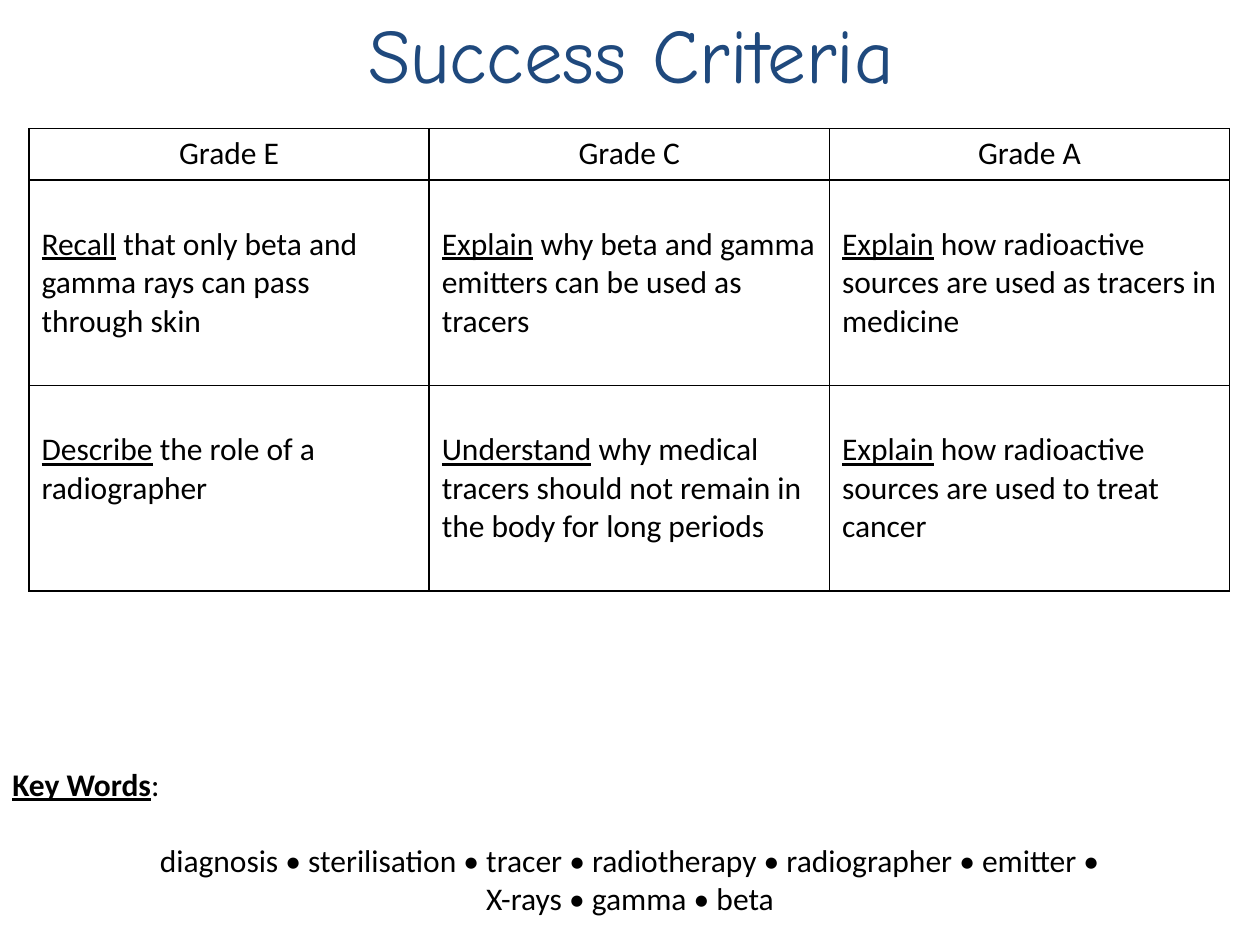
from lxml import etree
from pptx import Presentation
from pptx.dml.color import RGBColor
from pptx.enum.text import MSO_ANCHOR, PP_ALIGN
from pptx.oxml.ns import qn
from pptx.util import Inches, Pt

CENTER = PP_ALIGN.CENTER
LEFT = PP_ALIGN.LEFT
TOP = MSO_ANCHOR.TOP
BODY_FONT = "Calibri"
TITLE_FONT = "Comic Neue"
BLACK = "000000"
NAVY = "1F497D"

GRADES = ["Grade E", "Grade C", "Grade A"]
CRITERIA = [
    [
        ("Recall", " that only beta and gamma rays can pass through skin"),
        ("Explain", " why beta and gamma emitters can be used as tracers"),
        ("Explain", " how radioactive sources are used as tracers in medicine"),
    ],
    [
        ("Describe", " the role of a radiographer"),
        ("Understand", " why medical tracers should not remain in the body for long periods"),
        ("Explain", " how radioactive sources are used to treat cancer"),
    ],
]
KEY_WORDS = [
    "diagnosis • sterilisation • tracer • radiotherapy • radiographer • emitter •",
    "X-rays • gamma • beta",
]


def color(value):
    return RGBColor.from_string(value)


def style_paragraph(paragraph, alignment=LEFT, name=BODY_FONT, size=18, value=BLACK):
    paragraph.alignment = alignment
    paragraph.font.name = name
    paragraph.font.size = Pt(size)
    paragraph.font.color.rgb = color(value)


def add_lead_and_rest(paragraph, lead, rest, bold=None):
    lead_run = paragraph.add_run()
    lead_run.text = lead
    lead_run.font.underline = True
    lead_run.font.bold = bold
    paragraph.add_run().text = rest
    style_paragraph(paragraph)


def add_text_frame(slide, left, top, width, height):
    box = slide.shapes.add_textbox(Inches(left), Inches(top), Inches(width), Inches(height))
    frame = box.text_frame
    frame.word_wrap = True
    frame.vertical_anchor = TOP
    return frame


def add_title(slide):
    paragraph = add_text_frame(slide, 0.51, 0, 9, 1.25).paragraphs[0]
    paragraph.text = "Success Criteria"
    style_paragraph(paragraph, CENTER, TITLE_FONT, 44, NAVY)


def set_borders(cell):
    properties = cell._tc.get_or_add_tcPr()
    for index, side in enumerate(("a:lnL", "a:lnR", "a:lnT", "a:lnB")):
        line = etree.Element(qn(side), w=str(Pt(1)))
        fill = etree.SubElement(line, qn("a:solidFill"))
        etree.SubElement(fill, qn("a:srgbClr"), val=BLACK)
        properties.insert(index, line)


def add_criteria_table(slide):
    heights = [0.41, 1.63, 1.63]
    frame = slide.shapes.add_table(
        len(heights), len(GRADES), Inches(0.23), Inches(1.02), Inches(9.53), Inches(sum(heights))
    )
    table = frame.table
    table.first_row = False
    table.horz_banding = False
    for row, height in zip(table.rows, heights):
        row.height = Inches(height)
    for cell in table.iter_cells():
        cell.fill.background()
        set_borders(cell)
    for column, grade in enumerate(GRADES):
        paragraph = table.cell(0, column).text_frame.paragraphs[0]
        paragraph.text = grade
        style_paragraph(paragraph, CENTER)
    for row, criteria in enumerate(CRITERIA, start=1):
        for column, (verb, rest) in enumerate(criteria):
            cell = table.cell(row, column)
            cell.margin_top = Inches(0.36)
            add_lead_and_rest(cell.text_frame.paragraphs[0], verb, rest)


def add_key_words(slide):
    frame = add_text_frame(slide, 0, 6.02, 10, 1.31)
    heading = frame.paragraphs[0]
    add_lead_and_rest(heading, "Key Words", ":", bold=True)
    heading.space_after = Pt(22)
    for words in KEY_WORDS:
        paragraph = frame.add_paragraph()
        paragraph.text = words
        style_paragraph(paragraph, CENTER)


def main():
    presentation = Presentation()
    presentation.slide_width = Inches(10)
    presentation.slide_height = Inches(7.5)
    slide = presentation.slides.add_slide(presentation.slide_layouts[6])
    add_title(slide)
    add_criteria_table(slide)
    add_key_words(slide)
    presentation.save("out.pptx")


if __name__ == "__main__":
    main()
